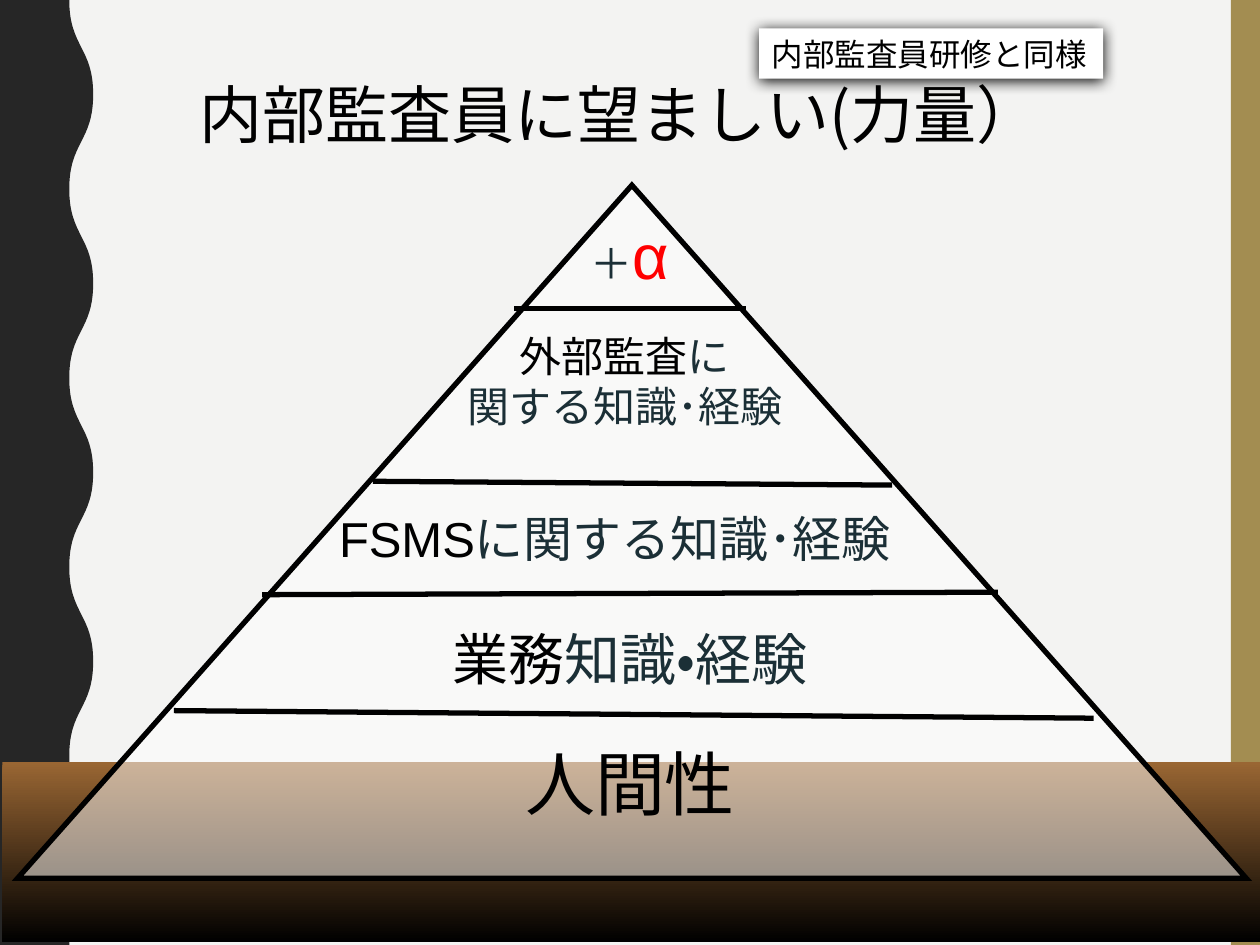
from dataclasses import dataclass

from lxml import etree
from pptx import Presentation
from pptx import util as u
from pptx.dml.color import RGBColor
from pptx.enum import lang, shapes, text
from pptx.oxml import parse_xml
from pptx.oxml.ns import nsdecls, qn

COLUMNS, ROWS = 100, 75
CELL = u.Inches(0.1)


@dataclass(frozen=True)
class Theme:
    background: str = "F3F3F2"
    wave: str = "262626"
    stripe: str = "A38D51"
    ground: tuple = ("996633", "000000")
    white: str = "FFFFFF"
    black: str = "000000"
    slate: str = "1B2F36"
    red: str = "FF0000"
    line_width: int = 3
    title_size: int = 36
    note_size: int = 18
    title_font: str = "Noto Sans CJK JP"
    label_font: str = "Arial"
    note_font: str = "Calibri"


@dataclass(frozen=True)
class Box:
    """A region measured in grid columns and rows."""
    x: float
    y: float
    width: float
    height: float

    def inner(self, x, y, width, height):
        return Box(self.x + x, self.y + y, width, height)

    def lengths(self):
        return [round(v * CELL) for v in (self.x, self.y, self.width, self.height)]


THEME = Theme()

# Label box inside the pyramid, size, lines of (text, colour, own size)
LEVELS = [
    ((39.4, 2, 18.3, 7), 24, [[("＋", THEME.slate, None), ("α", THEME.red, 36)]]),
    ((28.6, 11, 39.2, 9.1), 24,
     [[("外部監査", THEME.black, None), ("に", THEME.slate, None)],
      [("関する知識･経験", THEME.slate, None)]]),
    ((20.3, 25.2, 54.2, 5.7), 28,
     [[("FSMS", THEME.black, None), ("に関する知識･経験", THEME.slate, None)]]),
    ((28.2, 34.4, 40.8, 6.3), 32,
     [[("業務", THEME.black, None), ("知識・経験", THEME.slate, None)]]),
    ((36.1, 43.6, 25, 7.7), 40, [[("人間性", THEME.black, None)]]),
]

# Divider ends inside the pyramid: x1, y1, x2, y2
DIVIDERS = [
    (12.4, 41.7, 85.4, 42.3),
    (39.4, 9.8, 57.8, 9.8),
    (28.2, 23.5, 69.4, 23.8),
    (19.4, 32.5, 77.8, 32.3),
]


def color(value):
    return RGBColor.from_string(value)


def fill_plain(shape, value):
    shape.shadow.inherit = False
    shape.fill.solid()
    shape.fill.fore_color.rgb = color(value)
    shape.line.fill.background()


def draw_line(shape):
    shape.line.color.rgb = color(THEME.black)
    shape.line.width = u.Pt(THEME.line_width)


def add_shape(slide, kind, box, value):
    shape = slide.shapes.add_shape(kind, *box.lengths())
    fill_plain(shape, value)
    return shape


def write(shape, lines, font, size, align, wrap=True):
    frame = shape.text_frame
    frame.word_wrap = wrap
    frame.auto_size = text.MSO_AUTO_SIZE.SHAPE_TO_FIT_TEXT
    frame.vertical_anchor = text.MSO_ANCHOR.TOP
    for index, parts in enumerate(lines):
        paragraph = frame.add_paragraph() if index else frame.paragraphs[0]
        paragraph.alignment = align
        paragraph.font.name = font
        paragraph.font.size = u.Pt(size)
        for words, value, own_size in parts:
            run = paragraph.add_run()
            run.text = words
            run.font.color.rgb = color(value)
            run.font.language_id = lang.MSO_LANGUAGE_ID.JAPANESE
            if own_size:
                run.font.size = u.Pt(own_size)


def add_wave(slide, box):
    """Dark band whose right edge swings between a trough and a crest."""
    left, top, width, height = box.lengths()
    trough, crest = left + round(5.5 * CELL), left + width
    half_waves = 10
    half = height // half_waves
    edge = [(crest if n % 2 else trough, top + n * half) for n in range(half_waves + 1)]
    builder = slide.shapes.build_freeform(*edge[0])
    builder.add_line_segments([*edge[1:], (left, top + height), (left, top)], close=True)
    wave = builder.convert_to_shape()
    fill_plain(wave, THEME.wave)

    # Bend the edge segments into S-curves
    segments = wave._element.spPr.findall(".//" + qn("a:lnTo"))
    for segment, start, end in zip(segments, edge, edge[1:]):
        segment.tag = qn("a:cubicBezTo")
        middle = (start[1] + end[1]) // 2 - top
        for index, (x, _) in enumerate((start, end)):
            control = etree.Element(qn("a:pt"), x=str(x - left), y=str(middle))
            segment.insert(index, control)


def add_ground(slide, box):
    ground = add_shape(slide, shapes.MSO_SHAPE.RECTANGLE, box, THEME.black)
    ground.fill.gradient()
    ground.fill.gradient_angle = 270
    for stop, position, value in zip(ground.fill.gradient_stops, (0, 1), THEME.ground):
        stop.position = position
        stop.color.rgb = color(value)


def add_title(slide, box):
    title = slide.shapes.add_textbox(*box.lengths())
    title.text_frame.margin_left = u.Inches(0.76)
    write(title, [[("内部監査員に望ましい(力量）", THEME.black, None)]],
          THEME.title_font, THEME.title_size, text.PP_ALIGN.LEFT)


def add_pyramid(slide, box):
    # Half-transparent triangle with sharp corners
    triangle = add_shape(slide, shapes.MSO_SHAPE.FLOWCHART_EXTRACT, box, THEME.white)
    draw_line(triangle)
    etree.SubElement(triangle.line._ln, qn("a:miter"), lim="800000")
    tint = triangle.fill._xPr.find(qn("a:solidFill"))[0]
    etree.SubElement(tint, qn("a:alpha"), val="50000")

    # Dividers between levels
    for x1, y1, x2, y2 in DIVIDERS:
        ends = (box.x + x1, box.y + y1, box.x + x2, box.y + y2)
        divider = slide.shapes.add_connector(
            shapes.MSO_CONNECTOR.STRAIGHT, *[round(v * CELL) for v in ends])
        draw_line(divider)
        etree.SubElement(divider._element.spPr, qn("a:effectLst"))

    # Level labels, from the base up
    for place, size, lines in reversed(LEVELS):
        label = slide.shapes.add_textbox(*box.inner(*place).lengths())
        write(label, lines, THEME.label_font, size, text.PP_ALIGN.CENTER)


def add_note(slide, box):
    note = add_shape(slide, shapes.MSO_SHAPE.RECTANGLE, box, THEME.white)
    write(note, [[("内部監査員研修と同様", THEME.black, None)]],
          THEME.note_font, THEME.note_size, text.PP_ALIGN.LEFT, wrap=False)
    effects = note._element.spPr.find(qn("a:effectLst"))
    effects.append(parse_xml(
        f'<a:outerShdw {nsdecls("a")} blurRad="{u.Pt(8.5)}" dist="{u.Pt(1)}" '
        f'dir="5400000" algn="ctr" rotWithShape="0">'
        f'<a:srgbClr val="{THEME.black}"/></a:outerShdw>'))


def main():
    presentation = Presentation()
    presentation.slide_width = COLUMNS * CELL
    presentation.slide_height = ROWS * CELL
    slide = presentation.slides.add_slide(presentation.slide_layouts[6])
    slide.background.fill.solid()
    slide.background.fill.fore_color.rgb = color(THEME.background)

    # Side decoration
    add_shape(slide, shapes.MSO_SHAPE.RECTANGLE, Box(97.7, 0, 2.3, ROWS), THEME.stripe)
    add_wave(slide, Box(0, 0, 7.4, ROWS))

    # Content
    add_title(slide, Box(8.2, 5.5, 97.5, 7))
    add_ground(slide, Box(0.2, 60.5, 100, 14.3))
    add_pyramid(slide, Box(1.4, 14.7, 97.5, 55))
    add_note(slide, Box(60.25, 2.25, 27.3, 4))

    presentation.save("out.pptx")


if __name__ == "__main__":
    main()
